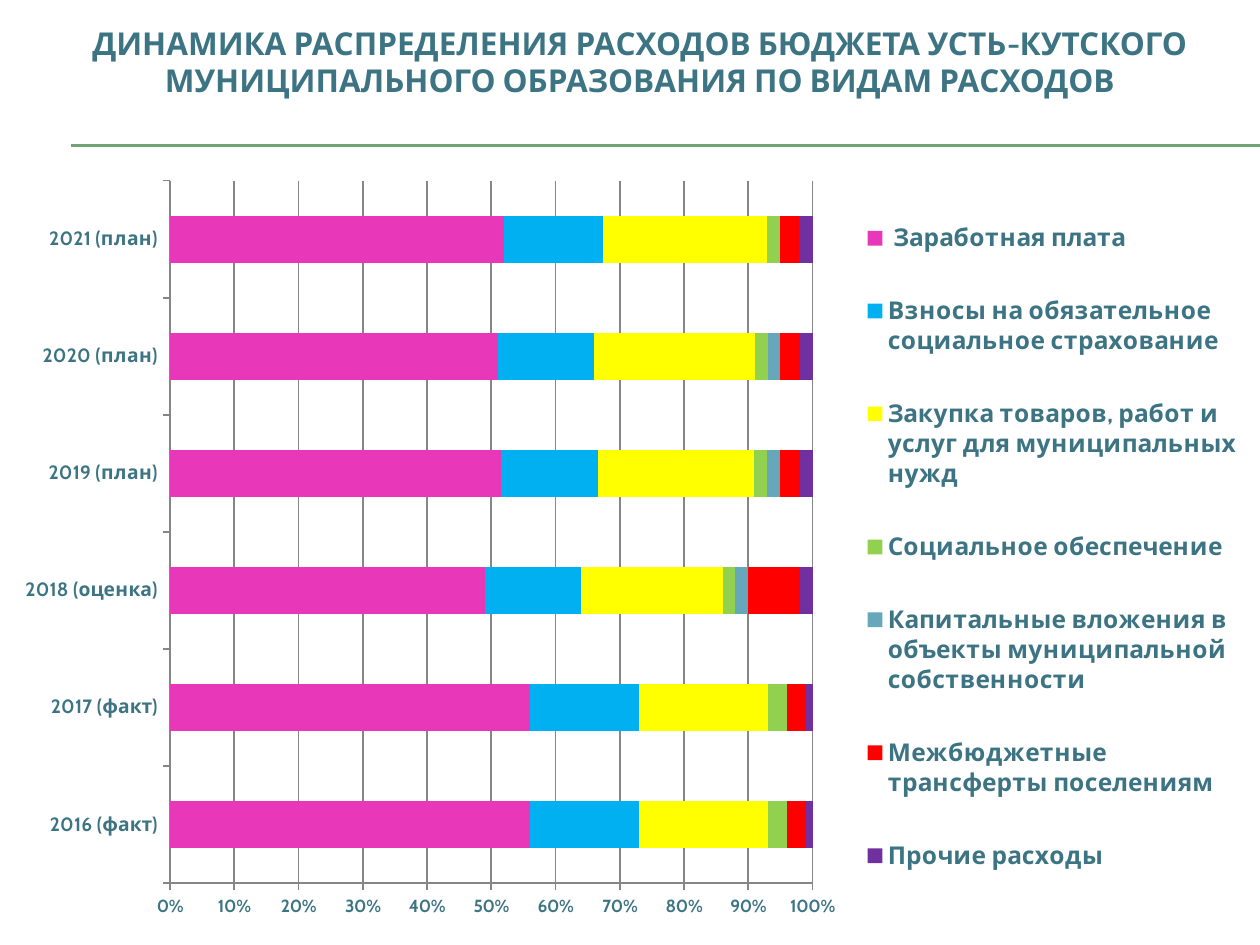
from dataclasses import dataclass

from lxml import etree
from pptx import Presentation
from pptx.chart.data import CategoryChartData
from pptx.dml.color import RGBColor
from pptx.enum.chart import XL_CHART_TYPE, XL_LEGEND_POSITION, XL_TICK_MARK
from pptx.enum.shapes import MSO_CONNECTOR
from pptx.enum.text import MSO_ANCHOR, PP_ALIGN
from pptx.oxml.ns import qn
from pptx.util import Inches, Pt

STACKED = XL_CHART_TYPE.BAR_STACKED_100
LEGEND_RIGHT = XL_LEGEND_POSITION.RIGHT
TICK_OUT = XL_TICK_MARK.OUTSIDE
STRAIGHT = MSO_CONNECTOR.STRAIGHT
MIDDLE = MSO_ANCHOR.MIDDLE
CENTER = PP_ALIGN.CENTER

FONT = "Cabin"
TEAL = RGBColor(0x3C, 0x74, 0x83)
GREEN = RGBColor(0x72, 0xA3, 0x76)
GRAY = RGBColor(0x86, 0x86, 0x86)
PINK = RGBColor(0xE9, 0x37, 0xBA)
BLUE = RGBColor(0x00, 0xB0, 0xF0)
YELLOW = RGBColor(0xFF, 0xFF, 0x00)
LIME = RGBColor(0x92, 0xD0, 0x50)
STEEL = RGBColor(0x66, 0xA7, 0xB9)
RED = RGBColor(0xFF, 0x00, 0x00)
PURPLE = RGBColor(0x70, 0x30, 0xA0)

SLIDE_W, SLIDE_H = Inches(10), Inches(7.5)
TITLE = "ДИНАМИКА РАСПРЕДЕЛЕНИЯ РАСХОДОВ БЮДЖЕТА УСТЬ-КУТСКОГО МУНИЦИПАЛЬНОГО ОБРАЗОВАНИЯ ПО ВИДАМ РАСХОДОВ"
YEARS = ("2016 (факт)", "2017 (факт)", "2018 (оценка)",
         "2019 (план)", "2020 (план)", "2021 (план)")


@dataclass(frozen=True)
class Box:
    x: float
    y: float
    w: float
    h: float


@dataclass(frozen=True)
class Expense:
    name: str
    shares: tuple
    color: RGBColor


TITLE_BOX = Box(0.033, 0.007, 0.95, 0.116)
CHART_BOX = Box(0, 0.175, 1, 0.808)
PLOT_BOX = Box(0.135, 0.02, 0.51, 0.92)
LEGEND_BOX = Box(0.68, 0.02, 0.31, 0.96)
RULE_LEFT = 0.056
RULE_ROWS = (1.15 / 7.5, 1.16 / 7.5)

EXPENSES = (
    Expense(" Заработная плата ", (56, 56, 49, 51, 51, 51), PINK),
    Expense("Взносы на обязательное социальное страхование", (17, 17, 15, 15, 15, 15), BLUE),
    Expense("Закупка товаров, работ и услуг для муниципальных нужд", (20, 20, 22, 24, 25, 25), YELLOW),
    Expense("Социальное обеспечение", (3, 3, 2, 2, 2, 2), LIME),
    Expense("Капитальные вложения в объекты муниципальной собственности", (0, 0, 2, 2, 2, 0), STEEL),
    Expense("Межбюджетные трансферты поселениям", (3, 3, 8, 3, 3, 3), RED),
    Expense("Прочие расходы", (1, 1, 2, 2, 2, 2), PURPLE),
)


def on_slide(box: Box) -> tuple:
    return (int(SLIDE_W * box.x), int(SLIDE_H * box.y),
            int(SLIDE_W * box.w), int(SLIDE_H * box.h))


def set_font(font, size: float) -> None:
    for key, value in {"name": FONT, "size": Pt(size), "bold": True}.items():
        setattr(font, key, value)
    font.color.rgb = TEAL


def set_line(line, color: RGBColor, width: float) -> None:
    line.color.rgb = color
    line.width = Pt(width)


def make_layout(box: Box, inner: bool = False):
    layout = etree.Element(qn("c:layout"))
    manual = etree.SubElement(layout, qn("c:manualLayout"))
    values = {"layoutTarget": "inner"} if inner else {}
    values |= {"xMode": "edge", "yMode": "edge",
               "x": box.x, "y": box.y, "w": box.w, "h": box.h}
    for tag, value in values.items():
        etree.SubElement(manual, qn(f"c:{tag}")).set("val", str(value))
    return layout


def drop_layout(parent) -> None:
    for old in parent.findall(qn("c:layout")):
        parent.remove(old)


def add_title(s) -> None:
    sp = s.shapes.title
    for key, value in zip(("left", "top", "width", "height"), on_slide(TITLE_BOX)):
        setattr(sp, key, value)
    tf = sp.text_frame
    tf.word_wrap = True
    tf.vertical_anchor = MIDDLE
    p = tf.paragraphs[0]
    p.alignment = CENTER
    r = p.add_run()
    r.text = TITLE
    set_font(r.font, 18)


def add_rule(s, row: float) -> None:
    y = int(SLIDE_H * row)
    rule = s.shapes.add_connector(STRAIGHT, int(SLIDE_W * RULE_LEFT), y, SLIDE_W, y)
    set_line(rule.line, GREEN, 0.75)
    etree.SubElement(rule.element.spPr, qn("a:effectLst"))


def format_axis(axis, size: float) -> None:
    axis.major_tick_mark = TICK_OUT
    set_font(axis.tick_labels.font, size)
    set_line(axis.format.line, GRAY, 1)


def add_expense_chart(s) -> None:
    data = CategoryChartData(number_format="0")
    data.categories = YEARS
    for expense in EXPENSES:
        data.add_series(expense.name, expense.shares)
    chart = s.shapes.add_chart(STACKED, *on_slide(CHART_BOX), data).chart
    chart.has_title = False
    chart.font.name = FONT
    chart.font.size = Pt(18)

    plot = chart.plots[0]
    plot.gap_width = 150
    plot.overlap = 100
    plot.vary_by_categories = False
    for series, expense in zip(plot.series, EXPENSES):
        series.format.fill.solid()
        series.format.fill.fore_color.rgb = expense.color
        series.invert_if_negative = False

    format_axis(chart.category_axis, 11)
    axis = chart.value_axis
    format_axis(axis, 10)
    axis.minimum_scale, axis.maximum_scale, axis.major_unit = 0, 1, 0.1
    axis.tick_labels.number_format = "0%"
    axis.tick_labels.number_format_is_linked = False
    axis.has_major_gridlines = True
    set_line(axis.major_gridlines.format.line, GRAY, 1)

    chart.has_legend = True
    legend = chart.legend
    legend.position = LEGEND_RIGHT
    legend.include_in_layout = False
    set_font(legend.font, 14)

    plot_area = chart.element.xpath("c:chart/c:plotArea")[0]
    drop_layout(plot_area)
    plot_area.insert(0, make_layout(PLOT_BOX, inner=True))
    legend_xml = chart.element.xpath("c:chart/c:legend")[0]
    drop_layout(legend_xml)
    legend_xml.find(qn("c:overlay")).addprevious(make_layout(LEGEND_BOX))


def main() -> None:
    prs = Presentation()
    prs.slide_width, prs.slide_height = SLIDE_W, SLIDE_H
    s = prs.slides.add_slide(prs.slide_layouts[5])
    for row in RULE_ROWS:
        add_rule(s, row)
    add_title(s)
    add_expense_chart(s)
    prs.save("out.pptx")


if __name__ == "__main__":
    main()
